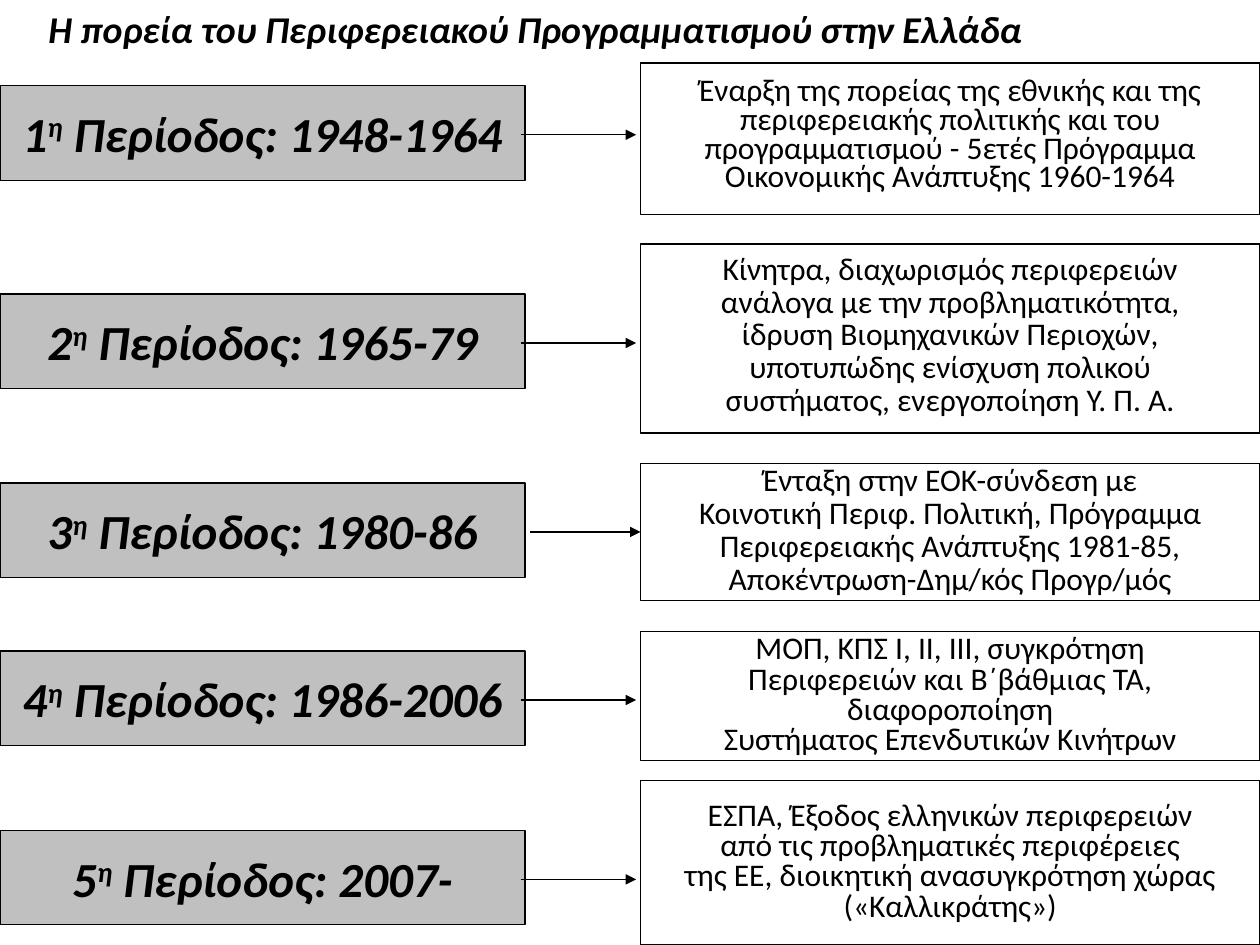
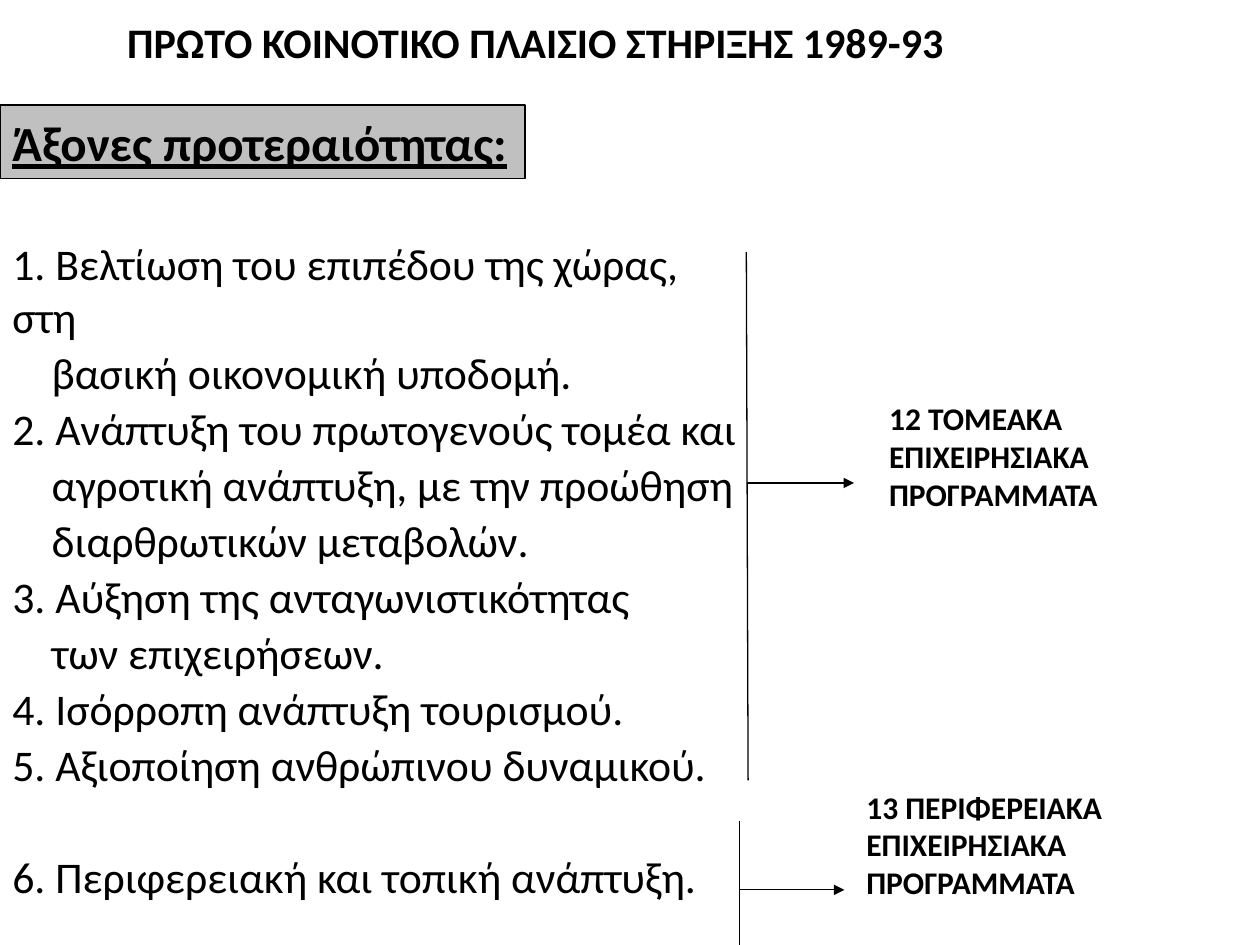
from lxml import etree
from pptx import Presentation
from pptx.dml.color import RGBColor
from pptx.enum import shapes, text
from pptx.oxml.ns import qn
from pptx.util import Pt

BLACK = RGBColor(0x00, 0x00, 0x00)
GREY = RGBColor(0xC0, 0xC0, 0xC0)
FONT = "Calibri"
CENTER, LEFT = text.PP_ALIGN.CENTER, text.PP_ALIGN.LEFT
MIDDLE, TOP = text.MSO_ANCHOR.MIDDLE, text.MSO_ANCHOR.TOP

# Slide 1: number, years, top of the period; detail box, spacing and lines
HISTORY_TITLE = "Η πορεία του Περιφερειακού Προγραμματισμού στην Ελλάδα"
PERIODS = [
    dict(number="1", years="1948-1964", top=49, detail=(36, 86.5),
         spacing=(0.55, 2.7, 1.8), arrow=(297.5, 363.5),
         lines=["Έναρξη της πορείας της εθνικής και της",
                "περιφερειακής πολιτικής και του",
                "προγραμματισμού - 5ετές Πρόγραμμα",
                "Οικονομικής Ανάπτυξης 1960-1964"]),
    dict(number="2", years="1965-79", top=168, detail=(139.5, 108),
         spacing=(0.65, 3.6, 1), arrow=(297.5, 363.5),
         lines=["Κίνητρα, διαχωρισμός περιφερειών",
                "ανάλογα με την προβληματικότητα,",
                "ίδρυση Βιομηχανικών Περιοχών,",
                "υποτυπώδης ενίσχυση πολικού",
                "συστήματος, ενεργοποίηση Υ. Π. Α."]),
    dict(number="3", years="1980-86", top=276, detail=(265, 78),
         spacing=(0.8, 1.5, 0), arrow=(303, 366),
         lines=["Ένταξη στην ΕΟΚ-σύνδεση με",
                "Κοινοτική Περιφ. Πολιτική, Πρόγραμμα",
                "Περιφερειακής Ανάπτυξης 1981-85,",
                "Αποκέντρωση-Δημ/κός Προγρ/μός"]),
    dict(number="4", years="1986-2006", top=372, detail=(361, 73.5),
         spacing=(0.8, 0, 0), arrow=(297.5, 363.5),
         lines=["ΜΟΠ, ΚΠΣ Ι, ΙΙ, ΙΙΙ, συγκρότηση",
                "Περιφερειών και Β΄βάθμιας ΤΑ,",
                "διαφοροποίηση",
                "Συστήματος Επενδυτικών Κινήτρων"]),
    dict(number="5", years="2007-", top=474.5, detail=(446, 94),
         spacing=(0.8, 0, 0), arrow=(297.5, 363.5),
         lines=["ΕΣΠΑ, Έξοδος ελληνικών περιφερειών",
                "από τις προβληματικές περιφέρειες",
                "της ΕΕ, διοικητική ανασυγκρότηση χώρας",
                "(«Καλλικράτης»)"]),
]

# Slide 2: each axis is a first line and its indented continuation lines
FRAMEWORK_TITLE = "ΠΡΩΤΟ ΚΟΙΝΟΤΙΚΟ ΠΛΑΙΣΙΟ ΣΤΗΡΙΞΗΣ 1989-93"
AXES_HEADING = "Άξονες προτεραιότητας:"
AXES = [
    ["1. Βελτίωση του επιπέδου της χώρας, στη", "βασική οικονομική υποδομή."],
    ["2. Ανάπτυξη του πρωτογενούς τομέα και",
     "αγροτική ανάπτυξη, με την προώθηση", "διαρθρωτικών μεταβολών."],
    ["3. Αύξηση της ανταγωνιστικότητας", "των επιχειρήσεων."],
    ["4. Ισόρροπη ανάπτυξη τουρισμού."],
    ["5. Αξιοποίηση ανθρώπινου δυναμικού."],
    ["6. Περιφερειακή και τοπική ανάπτυξη."],
]
# Bracket line, arrow, label box, label lines
PROGRAMMES = [
    ((426.5, 144, 427.5, 446), (427.5, 276, 488, 276), (501, 224.5, 219, 93.5),
     ["12 ΤΟΜΕΑΚΑ", "ΕΠΙΧΕΙΡΗΣΙΑΚΑ", "ΠΡΟΓΡΑΜΜΑΤΑ"]),
    ((422.5, 469, 422.5, 540), (422.5, 508.5, 482.5, 508.5), (488, 446.5, 232, 93.5),
     ["13 ΠΕΡΙΦΕΡΕΙΑΚΑ", "ΕΠΙΧΕΙΡΗΣΙΑΚΑ", "ΠΡΟΓΡΑΜΜΑΤΑ"]),
]

BAND_WIDTH, PERIOD_HEIGHT = 300, 54
DETAIL_LEFT, DETAIL_WIDTH = 366, 354
AXIS_INDENT, AXIS_GAP = 22.5, 1
LAST_AXIS_GAP = 33.5


def write(shape, lines, size, align=LEFT, anchor=MIDDLE, bold=False, italic=False):
    """Fill a shape with one paragraph per line; a line is a string or a list of runs."""
    frame = shape.text_frame
    frame.word_wrap = True
    frame.vertical_anchor = anchor
    for i, line in enumerate(lines):
        paragraph = frame.paragraphs[0] if i == 0 else frame.add_paragraph()
        for part in [line] if isinstance(line, str) else line:
            paragraph.add_run().text = part
        paragraph.alignment = align
        font = paragraph.font
        font.name, font.size = FONT, Pt(size)
        font.bold, font.italic = bold, italic
        font.color.rgb = BLACK
    return frame.paragraphs


def add_box(slide, box, fill=None):
    shape = slide.shapes.add_shape(shapes.MSO_SHAPE.RECTANGLE, *map(Pt, box))
    shape.shadow.inherit = False
    if fill is None:
        shape.fill.background()
    else:
        shape.fill.solid()
        shape.fill.fore_color.rgb = fill
    shape.line.color.rgb = BLACK
    shape.line.width = Pt(0.75)
    return shape


def add_text(slide, box, lines, size, **style):
    return write(slide.shapes.add_textbox(*map(Pt, box)), lines, size, **style)


def add_line(slide, ends, arrow=False):
    line = slide.shapes.add_connector(shapes.MSO_CONNECTOR.STRAIGHT, *map(Pt, ends))
    line.line.color.rgb = BLACK
    line.line.width = Pt(0.75)
    if arrow:
        etree.SubElement(line.line._get_or_add_ln(), qn("a:tailEnd"), type="triangle")
    etree.SubElement(line._element.spPr, qn("a:effectLst"))
    return line


def add_period(slide, period):
    band = add_box(slide, (0, period["top"], BAND_WIDTH, PERIOD_HEIGHT), GREY)
    runs = [period["number"], "η", f" Περίοδος: {period['years']}"]
    name = write(band, [runs], 28, align=CENTER, bold=True, italic=True)[0]
    name.runs[1].font._element.set("baseline", "30000")

    top, height = period["detail"]
    detail = add_box(slide, (DETAIL_LEFT, top, DETAIL_WIDTH, height))
    line_spacing, before, after = period["spacing"]
    for paragraph in write(detail, period["lines"], 18, align=CENTER):
        paragraph.line_spacing = line_spacing
        paragraph.space_before, paragraph.space_after = Pt(before), Pt(after)

    start, end = period["arrow"]
    y = period["top"] + PERIOD_HEIGHT / 2 + 1
    arrow = add_line(slide, (start, y, end, y), arrow=True)
    if end == DETAIL_LEFT:
        arrow.end_connect(detail, 1)


def build_history(slide):
    add_text(slide, (-108, 0, 828, 32), [HISTORY_TITLE], 21.6,
             align=CENTER, bold=True, italic=True)
    for period in PERIODS:
        add_period(slide, period)


def build_framework(slide):
    add_text(slide, (0, 0, 612, 48), [FRAMEWORK_TITLE], 24, align=CENTER, bold=True)
    heading = add_box(slide, (0, 60, BAND_WIDTH, 42), GREY)
    write(heading, [AXES_HEADING], 28, bold=True)[0].font.underline = True

    lines = [(line, i > 0) for axis in AXES for i, line in enumerate(axis)]
    paragraphs = add_text(slide, (0, 132, 429, 397.5), [line for line, _ in lines],
                          25, anchor=TOP)
    for paragraph, (_, continued) in zip(paragraphs, lines):
        paragraph.space_before = paragraph.space_after = Pt(AXIS_GAP)
        if continued:
            paragraph._p.get_or_add_pPr().set("marL", str(Pt(AXIS_INDENT)))
    paragraphs[-1].space_before = Pt(LAST_AXIS_GAP)

    for bracket, arrow, label, names in PROGRAMMES:
        add_line(slide, bracket)
        add_line(slide, arrow, arrow=True)
        add_text(slide, label, names, 18, anchor=TOP, bold=True)


def main():
    deck = Presentation()
    deck.slide_width, deck.slide_height = Pt(720), Pt(540)
    for build in (build_history, build_framework):
        build(deck.slides.add_slide(deck.slide_layouts[6]))
    deck.save("out.pptx")


if __name__ == "__main__":
    main()
